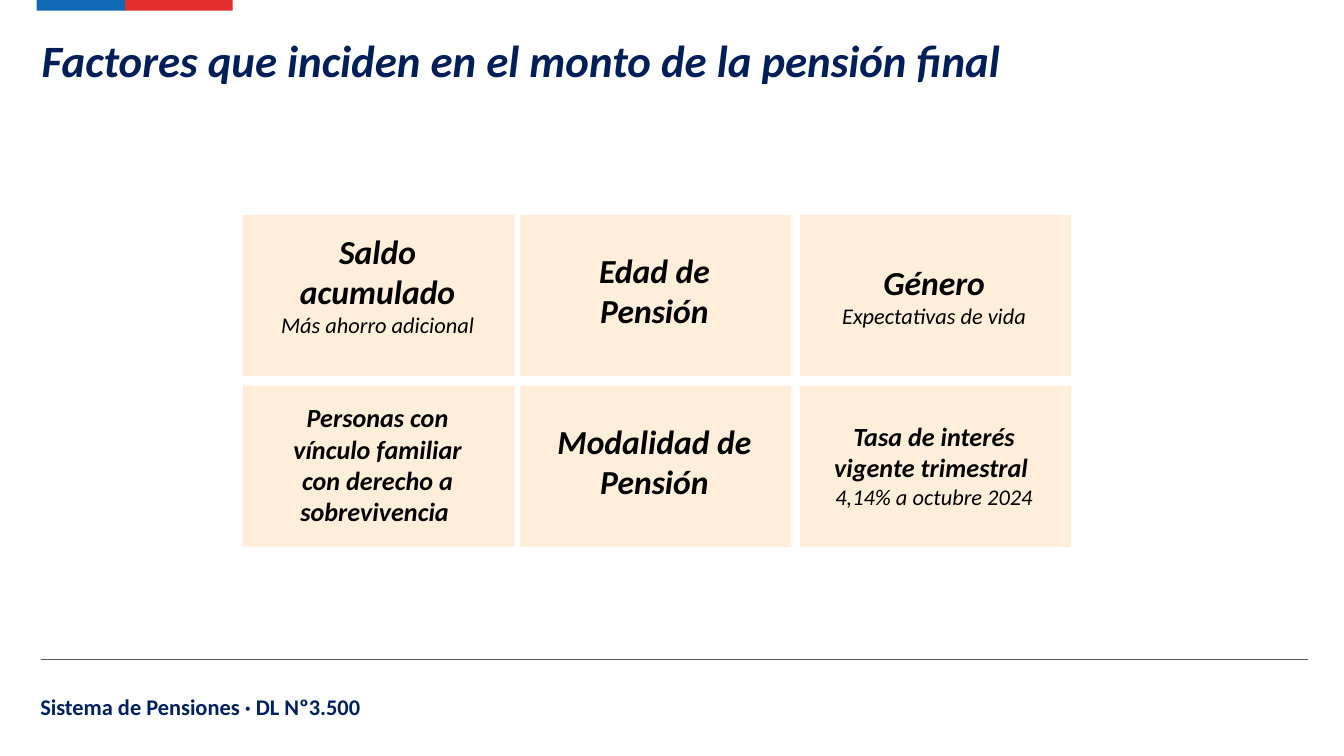
import pptx
import pptx.dml.color
import pptx.enum.shapes
import pptx.enum.text
import pptx.oxml
import pptx.util

Pt = pptx.util.Pt
FONT = "Calibri"
COLORS = {
    "title": "001E58",
    "footer": "002060",
    "rule": "595959",
    "blue": "1069B4",
    "red": "E22E2C",
    "card": "FFEED9",
    "text": "000000",
}
CARD_LEFTS = (130.3, 278.6, 428.4)
CARD_TOPS = (115.2, 206.6)
CARD_WIDTH, CARD_HEIGHT = 145.4, 86.4
LABEL_INSET, LABEL_WIDTH = 9.4, 125.3

# Each factor: label offset from the card top, label height, heading, heading size, detail
FACTORS = (
    (5, 65.5, "Saldo acumulado", 18, "Más ahorro adicional"),
    (15.1, 51.1, "Edad de Pensión", 18, None),
    (21.6, 43.9, "Género", 18, "Expectativas de vida"),
    (5, 74.9, "Personas con vínculo familiar con derecho a sobrevivencia ", 14, None),
    (15.1, 51.1, "Modalidad de Pensión", 18, None),
    (15.1, 55.4, "Tasa de interés vigente trimestral ", 14, "4,14% a octubre 2024"),
)


def rgb(name):
    """Return the named colour."""
    return pptx.dml.color.RGBColor.from_string(COLORS[name])


def add_run(paragraph, text, size, color, bold=True, italic=True):
    """Add one formatted run to a paragraph."""
    run = paragraph.add_run()
    run.text = text
    run.font.name = FONT
    run.font.size = Pt(size)
    run.font.bold = bold
    run.font.italic = italic
    run.font.color.rgb = rgb(color)


def add_block(slide, left, top, width, height, color):
    """Add a plain filled rectangle."""
    block = slide.shapes.add_shape(
        pptx.enum.shapes.MSO_SHAPE.RECTANGLE, Pt(left), Pt(top), Pt(width), Pt(height))
    block.shadow.inherit = False
    block.fill.solid()
    block.fill.fore_color.rgb = rgb(color)
    block.line.fill.background()


def add_label(slide, left, top, width, height):
    """Add a wrapping text box and return its text frame."""
    frame = slide.shapes.add_textbox(Pt(left), Pt(top), Pt(width), Pt(height)).text_frame
    frame.word_wrap = True
    return frame


def add_title(slide, text):
    """Place and fill the title placeholder."""
    title = slide.shapes.title
    title.left, title.top, title.width, title.height = Pt(15.1), Pt(13.7), Pt(685.4), Pt(36)
    frame = title.text_frame
    frame.word_wrap = True
    frame.auto_size = pptx.enum.text.MSO_AUTO_SIZE.SHAPE_TO_FIT_TEXT
    frame.vertical_anchor = pptx.enum.text.MSO_ANCHOR.TOP
    heading = frame.paragraphs[0]
    heading.alignment = pptx.enum.text.PP_ALIGN.LEFT
    add_run(heading, text, 24, "title")


def add_factor(slide, left, top, offset, height, heading, size, detail):
    """Add a factor card with its heading and optional detail."""
    add_block(slide, left, top, CARD_WIDTH, CARD_HEIGHT, "card")
    frame = add_label(slide, left + LABEL_INSET, top + offset, LABEL_WIDTH, height)
    frame.auto_size = pptx.enum.text.MSO_AUTO_SIZE.SHAPE_TO_FIT_TEXT
    add_run(frame.paragraphs[0], heading, size, "text")
    if detail:
        add_run(frame.add_paragraph(), detail, 12, "text", bold=False)
    for paragraph in frame.paragraphs:
        paragraph.alignment = pptx.enum.text.PP_ALIGN.CENTER


def add_footer(slide, text):
    """Add the footer rule and its text."""
    rule = slide.shapes.add_connector(
        pptx.enum.shapes.MSO_CONNECTOR.STRAIGHT, Pt(21.8), Pt(353.5), Pt(700.6), Pt(353.5))
    rule.line.color.rgb = rgb("rule")
    rule.line.width = Pt(0.75)
    rule._element.spPr.append(pptx.oxml.parse_xml(
        '<a:effectLst xmlns:a="http://schemas.openxmlformats.org/drawingml/2006/main"/>'))
    frame = add_label(slide, 16.6, 368.6, 280, 18)
    frame.margin_left = frame.margin_right = Pt(5)
    frame.margin_top = frame.margin_bottom = Pt(2.9)
    add_run(frame.paragraphs[0], text, 12, "footer", italic=False)


def main():
    """Build and save the slide."""
    deck = pptx.Presentation()
    deck.slide_width, deck.slide_height = Pt(720), Pt(405)
    slide = deck.slides.add_slide(deck.slide_layouts[5])
    add_footer(slide, "Sistema de Pensiones · DL Nº3.500")
    add_block(slide, 19.6, -1.4, 47.5, 7.2, "blue")
    add_block(slide, 67.1, -1.4, 57.6, 7.2, "red")
    add_title(slide, "Factores que inciden en el monto de la pensión final")
    for index, factor in enumerate(FACTORS):
        row, column = divmod(index, len(CARD_LEFTS))
        add_factor(slide, CARD_LEFTS[column], CARD_TOPS[row], *factor)
    deck.save("out.pptx")


if __name__ == "__main__":
    main()
